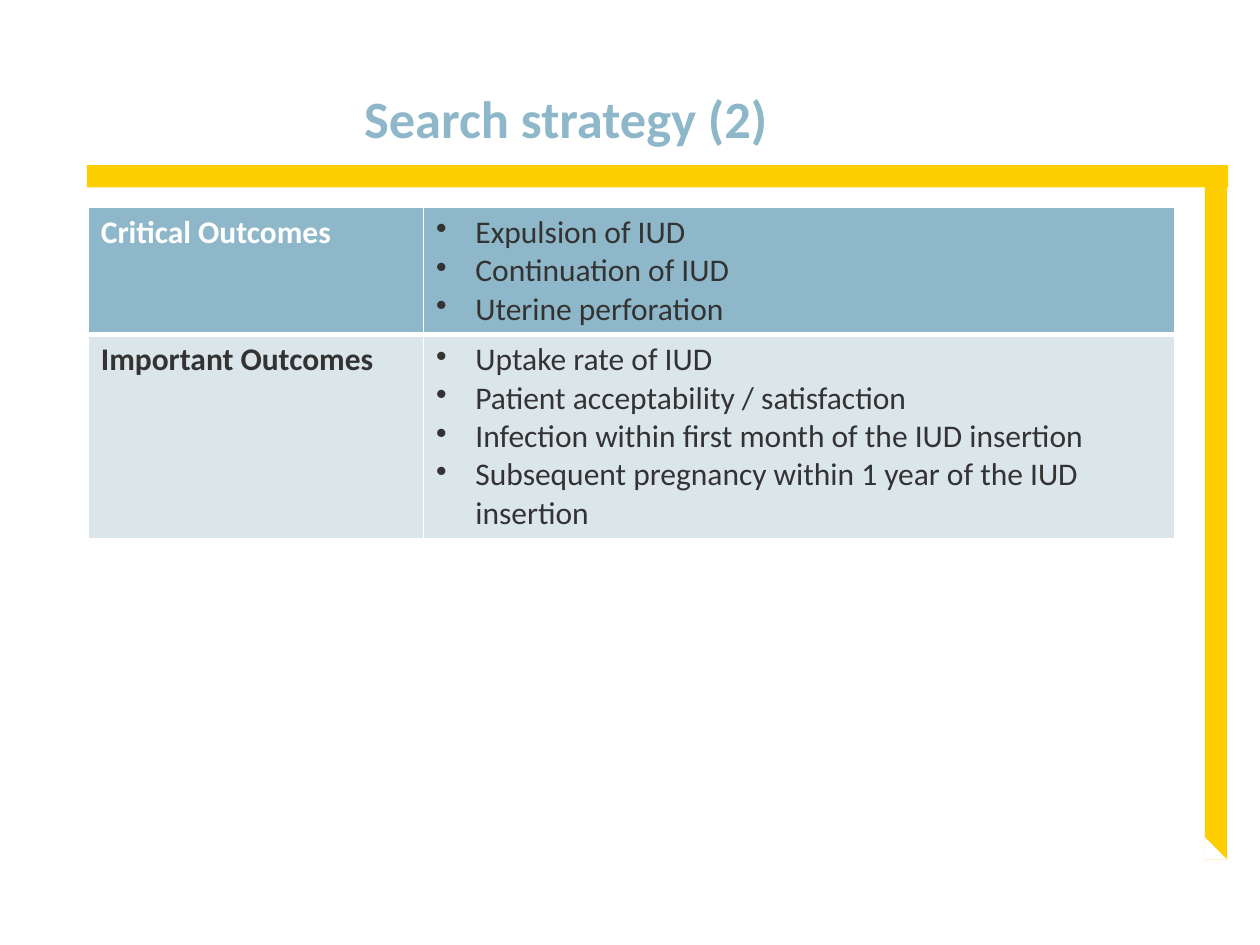
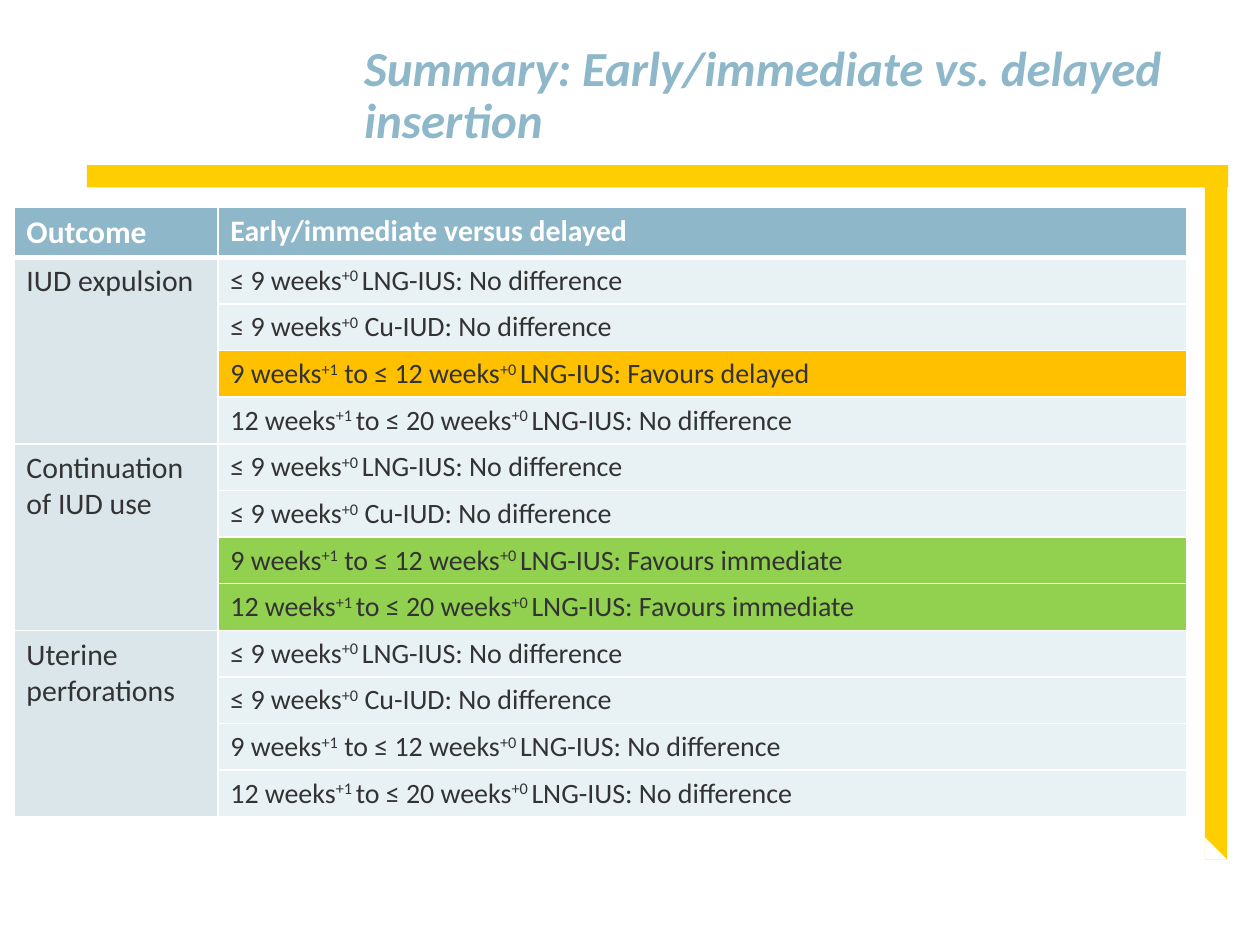
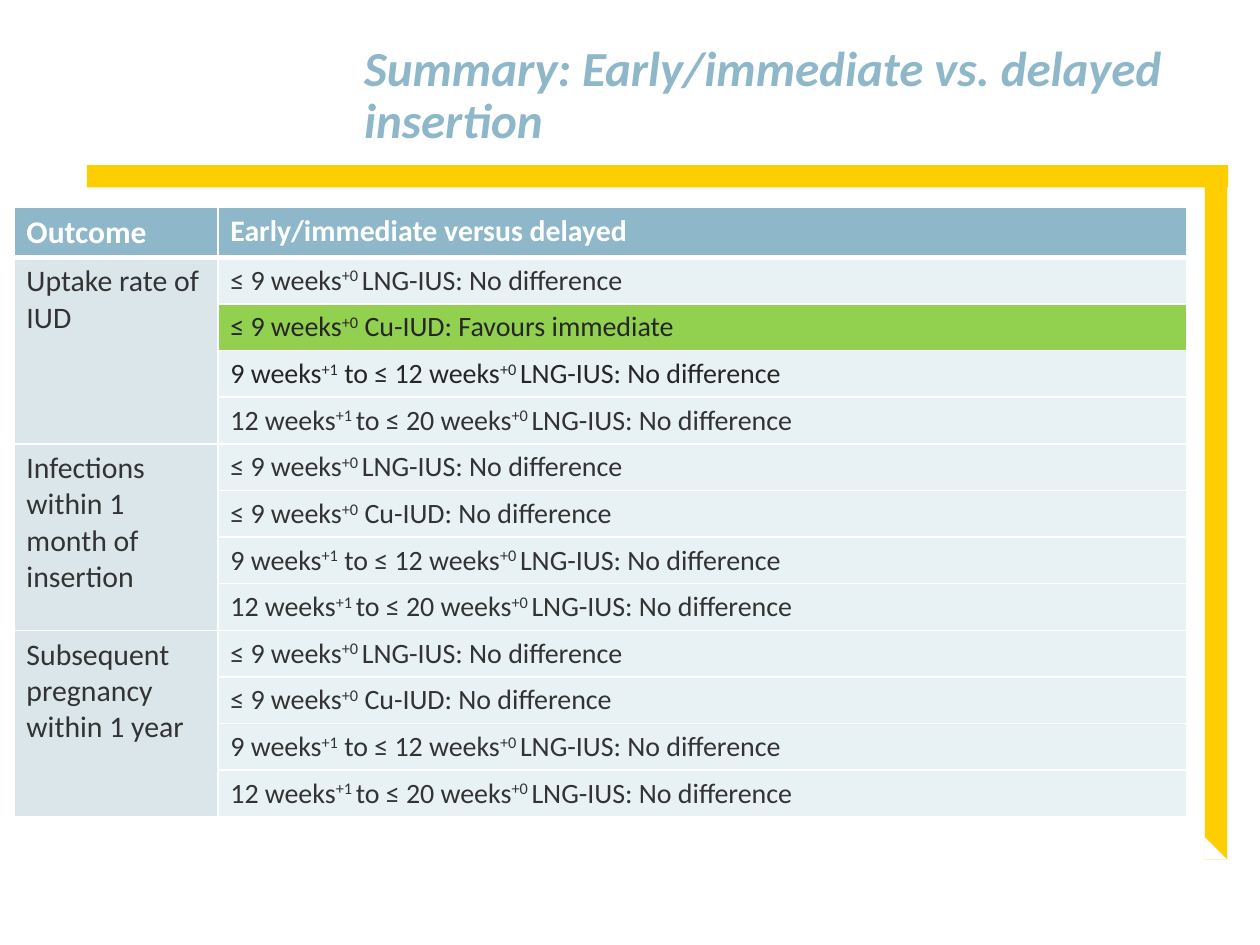
from dataclasses import dataclass

from lxml.etree import SubElement as Sub
from pptx import Presentation
from pptx.dml.color import RGBColor as Rgb
from pptx.enum.shapes import MSO_SHAPE as Kind
from pptx.enum.text import MSO_ANCHOR as Anchor
from pptx.oxml.ns import qn
from pptx.util import Cm, Pt

FONT = "Calibri"
HUES = {
    "gold": "FFCE00", "white": "FFFFFF", "blue": "8EB8C9", "text": "333333",
    "dark": "262626", "pale": "DBE6EB", "light": "E8F1F4",
    "amber": "FFC000", "green": "92D050",
}

# Verdicts and the fill each one gets
SAME, LATE, SOON = "No difference", "Favours delayed", "Favours immediate"
FILLS = {SAME: "light", LATE: "amber", SOON: "green"}

# Text between carets is superscript
TERMS = [
    "≤ 9 weeks^+0 ^LNG-IUS",
    "≤ 9 weeks^+0^ Cu-IUD",
    "9 weeks^+1^ to ≤ 12 weeks^+0 ^LNG-IUS",
    "12 weeks^+1 ^to ≤ 20 weeks^+0 ^LNG-IUS",
]


@dataclass
class Bar:
    kind: Kind
    left: float
    top: float
    width: float
    height: float
    hue: str


@dataclass
class Style:
    size: int
    fill: str
    hue: str = "text"
    bold: bool = False


@dataclass
class Group:
    name: str
    marks: list[str]
    dark: tuple[int, ...] = ()


BARS = [
    Bar(Kind.RECTANGLE, 1.75, 3.33, 23.01, 0.45, "gold"),
    Bar(Kind.RECTANGLE, 24.29, 3.33, 0.45, 14, "gold"),
    Bar(Kind.ISOSCELES_TRIANGLE, 24.29, 16.88, 0.45, 0.45, "white"),
]

OUTCOMES = [
    ("Critical Outcomes", Style(18, "blue", "white", True),
     ["Expulsion of IUD", "Continuation of IUD", "Uterine perforation"]),
    ("Important Outcomes", Style(18, "pale", bold=True),
     ["Uptake rate of IUD", "Patient acceptability / satisfaction",
      "Infection within first month of the IUD insertion",
      "Subsequent pregnancy within 1 year of the IUD insertion"]),
]

TABLES = [
    [Group("IUD expulsion", [SAME, SAME, LATE, SAME]),
     Group("Continuation of IUD use", [SAME, SAME, SOON, SOON]),
     Group("Uterine perforations", [SAME] * 4)],
    [Group("Uptake rate of IUD", [SAME, SOON, SAME, SAME], dark=(1, 2)),
     Group("Infections within 1 month of insertion", [SAME] * 4),
     Group("Subsequent pregnancy within 1 year", [SAME] * 4)],
]


def tint(name: str) -> Rgb:
    return Rgb.from_string(HUES[name])


def set_font(para, size: int, hue: str, bold: bool, slant: bool = False) -> None:
    font = para.font
    font.name, font.size, font.bold, font.italic = FONT, Pt(size), bold, slant
    font.color.rgb = tint(hue)


# Shared frame: gold bands and the title
def add_page(deck, title: str, size: int, slant: bool = False):
    page = deck.slides.add_slide(deck.slide_layouts[6])
    for bar in BARS:
        shape = page.shapes.add_shape(
            bar.kind, Cm(bar.left), Cm(bar.top), Cm(bar.width), Cm(bar.height))
        shape.shadow.inherit = False
        shape.fill.solid()
        shape.fill.fore_color.rgb = tint(bar.hue)
        shape.line.fill.background()
        if bar.kind == Kind.ISOSCELES_TRIANGLE:
            shape.adjustments[0] = 0
    frame = page.shapes.add_textbox(Cm(6.43), Cm(0.5), Cm(18.25), Cm(2.64)).text_frame
    frame.word_wrap = True
    frame.vertical_anchor = Anchor.BOTTOM
    para = frame.paragraphs[0]
    para.text = title
    para.line_spacing = 0.9
    para._p.get_or_add_pPr().set("marL", str(Cm(0.66)))
    set_font(para, size, "blue", True, slant)
    return page


# Tables
def add_grid(page, left: float, widths: list[float], heights: list[float]):
    grid = page.shapes.add_table(
        len(heights), len(widths), Cm(left), Cm(4.17),
        Cm(sum(widths)), Cm(sum(heights))).table
    grid.horz_banding = False
    for col, width in zip(grid.columns, widths):
        col.width = Cm(width)
    for row, height in zip(grid.rows, heights):
        row.height = Cm(height)
    return grid


def paint(grid, row: int, col: int, fill: str):
    cell = grid.cell(row, col)
    props = cell._tc.get_or_add_tcPr()
    thick = {0: "lnB", 1: "lnT"}.get(row)
    for side in ("lnL", "lnR", "lnT", "lnB"):
        line = Sub(props, qn(f"a:{side}"), w=str(Pt(3 if side == thick else 1)))
        Sub(Sub(line, qn("a:solidFill")), qn("a:srgbClr"), val=HUES["white"])
    cell.fill.solid()
    cell.fill.fore_color.rgb = tint(fill)
    return cell


def put(grid, row: int, col: int, lines: list[str], style: Style,
        dots: bool = False) -> None:
    frame = paint(grid, row, col, style.fill).text_frame
    for num, line in enumerate(lines):
        para = frame.add_paragraph() if num else frame.paragraphs[0]
        for part, text in enumerate(line.split("^")):
            run = para.add_run()
            run.text = text
            if part % 2:
                run._r.get_or_add_rPr().set("baseline", "30000")
        if dots:
            props = para._p.get_or_add_pPr()
            props.set("marL", str(Cm(0.79)))
            props.set("indent", str(Cm(-0.79)))
            Sub(props, qn("a:buChar"), char="•")
        set_font(para, style.size, style.hue, style.bold)


def add_search(deck) -> None:
    page = add_page(deck, "Search strategy (2)", 30)
    grid = add_grid(page, 1.78, [6.76, 15.14], [2.57, 4.12])
    for row, (name, style, items) in enumerate(OUTCOMES):
        put(grid, row, 0, [name], style)
        put(grid, row, 1, items, Style(18, style.fill), dots=True)


def add_summary(deck, groups: list[Group]) -> None:
    page = add_page(deck, "Summary: Early/immediate vs. delayed insertion", 28, True)
    step = len(TERMS)
    grid = add_grid(page, 0.28, [4.11, 19.53], [1] + [0.94] * step * len(groups))
    put(grid, 0, 0, ["Outcome"], Style(18, "blue", "white", True))
    put(grid, 0, 1, ["Early/immediate versus delayed"],
        Style(17, "blue", "white", True))
    for num, group in enumerate(groups):
        top = 1 + num * step
        put(grid, top, 0, [group.name], Style(17, "pale"))
        for pos, (term, mark) in enumerate(zip(TERMS, group.marks)):
            if pos:
                paint(grid, top + pos, 0, "pale")
            hue = "dark" if pos in group.dark else "text"
            put(grid, top + pos, 1, [f"{term}: {mark}"], Style(16, FILLS[mark], hue))
        grid.cell(top, 0).merge(grid.cell(top + step - 1, 0))


def main() -> None:
    deck = Presentation()
    deck.slide_width, deck.slide_height = Cm(25.4), Cm(19.05)
    add_search(deck)
    for groups in TABLES:
        add_summary(deck, groups)
    deck.save("out.pptx")


if __name__ == "__main__":
    main()
